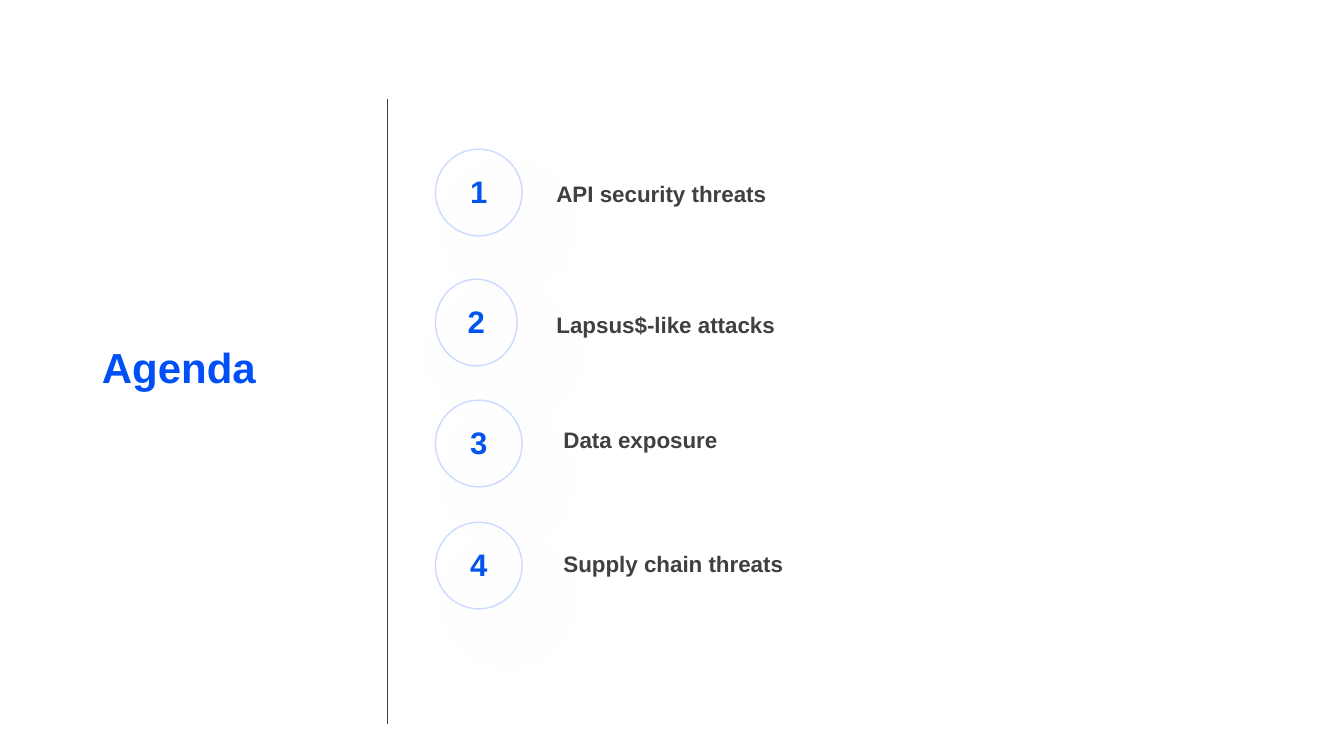
from dataclasses import dataclass

from lxml.etree import SubElement
from pptx import Presentation
from pptx.dml.color import RGBColor
from pptx.enum.shapes import MSO_CONNECTOR as Connector, MSO_SHAPE as Preset
from pptx.enum.text import MSO_ANCHOR as Anchor, PP_ALIGN as Align
from pptx.oxml.ns import qn
from pptx.util import Inches, Pt


@dataclass
class Theme:
    font: str = "Arial"
    title_color: str = "014FF7"
    number_color: str = "0254EC"
    ring_color: str = "CBDBFF"
    dark: str = "404040"
    shadow_color: str = "000000"
    title_size: float = 30
    number_size: float = 22.2
    label_size: float = 16


theme = Theme()
presentation = Presentation()
presentation.slide_width = Inches(13.33)
presentation.slide_height = Inches(7.5)
slide = presentation.slides.add_slide(presentation.slide_layouts[5])


def area(left, top, width, height):
    column = presentation.slide_width / 100
    row = presentation.slide_height / 100
    return [round(length) for length in
            (left * column, top * row, width * column, height * row)]


def write(shape, text, size, color, align, spacing):
    text_frame = shape.text_frame
    text_frame.text = text
    text_frame.word_wrap = True
    paragraph = text_frame.paragraphs[0]
    paragraph.alignment = align
    paragraph.line_spacing = spacing
    paragraph.space_before = Pt(0)
    font = paragraph.runs[0].font
    font.name = theme.font
    font.size = Pt(size)
    font.bold = True
    font.color.rgb = RGBColor.from_string(color)


title = slide.shapes.title
title.left, title.top, title.width, title.height = area(6.83, 43.47, 17.33, 10.8)
write(title, "Agenda", theme.title_size, theme.title_color, Align.LEFT, 0.9)
title.text_frame.vertical_anchor = Anchor.MIDDLE

x, top, _, height = area(28.8, 13.07, 0, 82.66)
divider = slide.shapes.add_connector(Connector.STRAIGHT, x, top, x, top + height)
divider.line.color.rgb = RGBColor.from_string(theme.dark)
divider.line.width = Pt(0.5)
SubElement(divider.element.spPr, qn("a:effectLst"))

ring_left = 32.4
ring_height = 11.47
number_inset = 0.53
number_drop = 3.4
topics = [
    ("API security threats", 19.73, 6.45, (40.66, 23.6, 35.63, 4.93)),
    ("Lapsus$-like attacks", 36.93, 6.08, (40.66, 40.93, 36.16, 7.33)),
    ("Data exposure", 52.93, 6.45, (41.19, 56.13, 35.63, 6.8)),
    ("Supply chain threats", 69.07, 6.45, (41.19, 72.53, 35.63, 4.93)),
]

for number, (topic, ring_top, ring_width, label_area) in enumerate(topics, 1):
    label = slide.shapes.add_textbox(*area(*label_area))
    write(label, topic, theme.label_size, theme.dark, Align.LEFT, 0.9)

    ring = slide.shapes.add_shape(
        Preset.OVAL, *area(ring_left, ring_top, ring_width, ring_height))
    ring.fill.background()
    ring.line.color.rgb = RGBColor.from_string(theme.ring_color)
    ring.line.width = Pt(1)
    ring.shadow.inherit = False
    effects = ring.element.spPr.find(qn("a:effectLst"))
    shadow = SubElement(
        effects, qn("a:outerShdw"), blurRad=str(Pt(61)), dist=str(Pt(31)),
        dir=str(50 * 60000), algn="tl", rotWithShape="0")
    shadow_color = SubElement(shadow, qn("a:srgbClr"), val=theme.shadow_color)
    SubElement(shadow_color, qn("a:alpha"), val="20000")

    digit = slide.shapes.add_textbox(*area(
        ring_left + number_inset, ring_top + number_drop,
        ring_width - 2 * number_inset, 5.47))
    write(digit, str(number), theme.number_size, theme.number_color, Align.CENTER, 0.8)

presentation.save("out.pptx")
